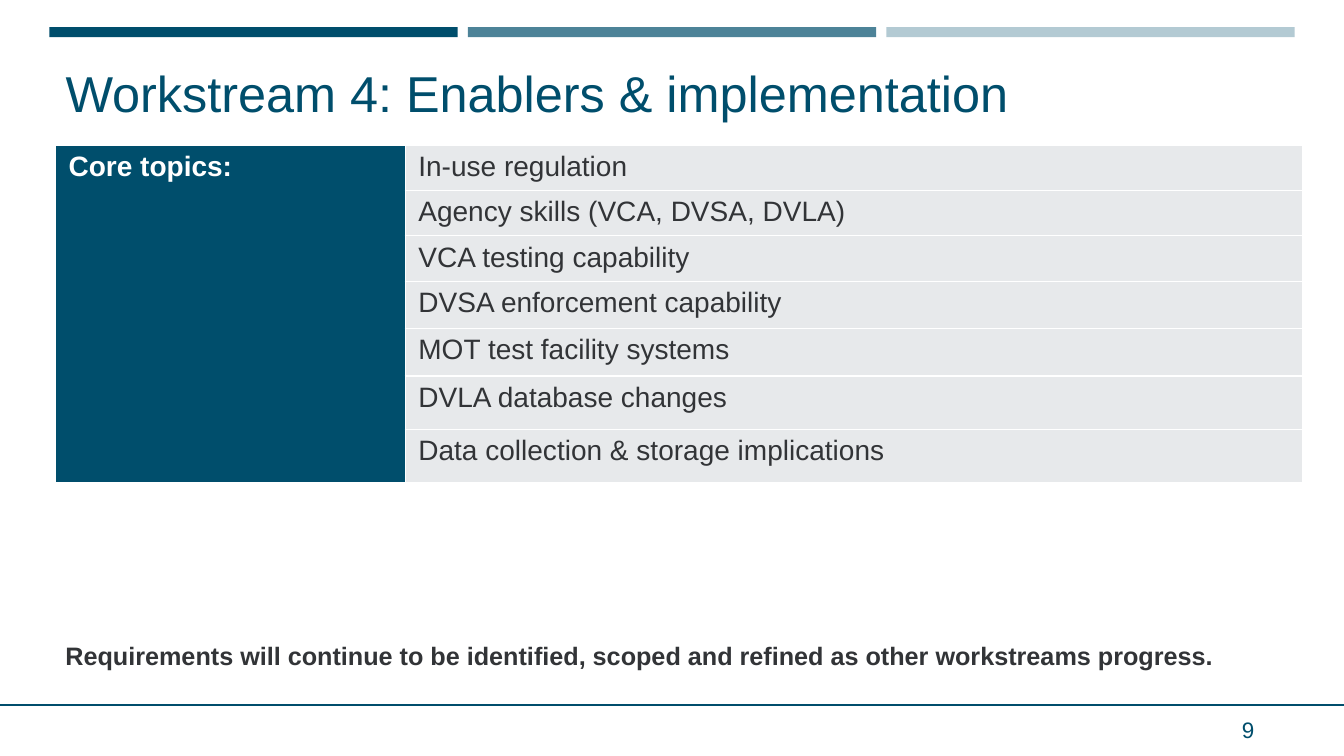
from lxml.etree import SubElement
from pptx import Presentation
from pptx.dml.color import RGBColor
from pptx.enum.shapes import MSO_CONNECTOR, MSO_SHAPE
from pptx.enum.text import MSO_ANCHOR, MSO_AUTO_SIZE, PP_ALIGN
from pptx.oxml.ns import qn
from pptx.util import Pt

SCALE = 9144
NAVY, STEEL, MIST = "004E6C", "4D8398", "B3CAD3"
INK, PALE, WHITE = "323437", "E7E9EB", "FFFFFF"
TOPICS = [
    ("In-use regulation", 45),
    ("Agency skills (VCA, DVSA, DVLA)", 45),
    ("VCA testing capability", 45),
    ("DVSA enforcement capability", 47),
    ("MOT test facility systems", 47),
    ("DVLA database changes", 53),
    ("Data collection & storage implications", 53),
]


def px(*sizes):
    """Turn lengths in px into EMU."""
    return [size * SCALE for size in sizes]


def color(code):
    """Turn a hex string into a colour."""
    return RGBColor.from_string(code)


def write(frame, text, size=20, ink=INK, bold=False, space=1.0, after=0):
    """Put formatted text into a text frame."""
    line = frame.paragraphs[0]
    line.alignment = PP_ALIGN.LEFT
    line.line_spacing = space
    line.space_after = Pt(after)
    run = line.add_run()
    run.text = text
    run.font.name = "Arial"
    run.font.size = Pt(size)
    run.font.bold = bold
    run.font.color.rgb = color(ink)


def add_title(slide, text):
    """Place and fill the title."""
    title = slide.shapes.title
    title.left, title.top, title.width, title.height = px(55, 50, 1223, 77)
    frame = title.text_frame
    frame.auto_size = MSO_AUTO_SIZE.NONE
    frame.vertical_anchor = MSO_ANCHOR.BOTTOM
    write(frame, text, size=36, ink=NAVY, space=0.9)


def add_note(slide, box, text, anchor=MSO_ANCHOR.TOP, **style):
    """Add a text box."""
    frame = slide.shapes.add_textbox(*px(*box)).text_frame
    frame.word_wrap = True
    frame.vertical_anchor = anchor
    write(frame, text, **style)


def add_bar(slide, left, fill):
    """Add one bar of the top band."""
    bar = slide.shapes.add_shape(MSO_SHAPE.RECTANGLE, *px(left, 27, 405, 10))
    bar.shadow.inherit = False
    bar.fill.solid()
    bar.fill.fore_color.rgb = color(fill)
    bar.line.fill.background()


def add_rule(slide):
    """Add the footer line."""
    rule = slide.shapes.add_connector(MSO_CONNECTOR.STRAIGHT, *px(0, 699, 1333, 699))
    rule.line.color.rgb = color(NAVY)
    rule.line.width = Pt(1.5)
    SubElement(rule._element.spPr, qn("a:effectLst"))


def dress(cell, fill):
    """Give a cell its borders, margins and fill."""
    props = cell._tc.get_or_add_tcPr()
    for side in ("lnL", "lnR", "lnT", "lnB"):
        edge = SubElement(props, qn("a:" + side), w=str(Pt(1)))
        SubElement(SubElement(edge, qn("a:solidFill")), qn("a:srgbClr"), val=WHITE)
    cell.margin_left, cell.margin_right = px(13, 13)
    cell.margin_top, cell.margin_bottom = px(6, 6)
    cell.fill.solid()
    cell.fill.fore_color.rgb = color(fill)


def add_topics(slide):
    """Add the table of core topics."""
    high = sum(size for _, size in TOPICS)
    table = slide.shapes.add_table(len(TOPICS), 2, *px(55, 144, 1237, high)).table
    table.columns[0].width, table.columns[1].width = px(347, 890)
    for row, (topic, size) in zip(table.rows, TOPICS):
        row.height = size * SCALE
        head, body = row.cells
        dress(head, NAVY)
        dress(body, PALE)
        write(body.text_frame, topic)
    first = table.cell(0, 0)
    first.merge(table.cell(len(TOPICS) - 1, 0))
    write(first.text_frame, "Core topics:", ink=WHITE, bold=True)


def main():
    """Build the slide and save it."""
    deck = Presentation()
    deck.slide_width, deck.slide_height = px(1333, 750)
    slide = deck.slides.add_slide(deck.slide_layouts[5])
    add_rule(slide)
    for spot, fill in enumerate((NAVY, STEEL, MIST)):
        add_bar(slide, 49 + 415 * spot, fill)
    add_topics(slide)
    add_title(slide, "Workstream 4: Enablers & implementation")
    add_note(slide, (1222, 704, 56, 40), "9", anchor=MSO_ANCHOR.MIDDLE,
             size=16, ink=NAVY, after=6)
    add_note(slide, (55, 630, 1236, 40),
             "Requirements will continue to be identified, scoped and refined "
             "as other workstreams progress.", size=18, bold=True)
    deck.save("out.pptx")


if __name__ == "__main__":
    main()
